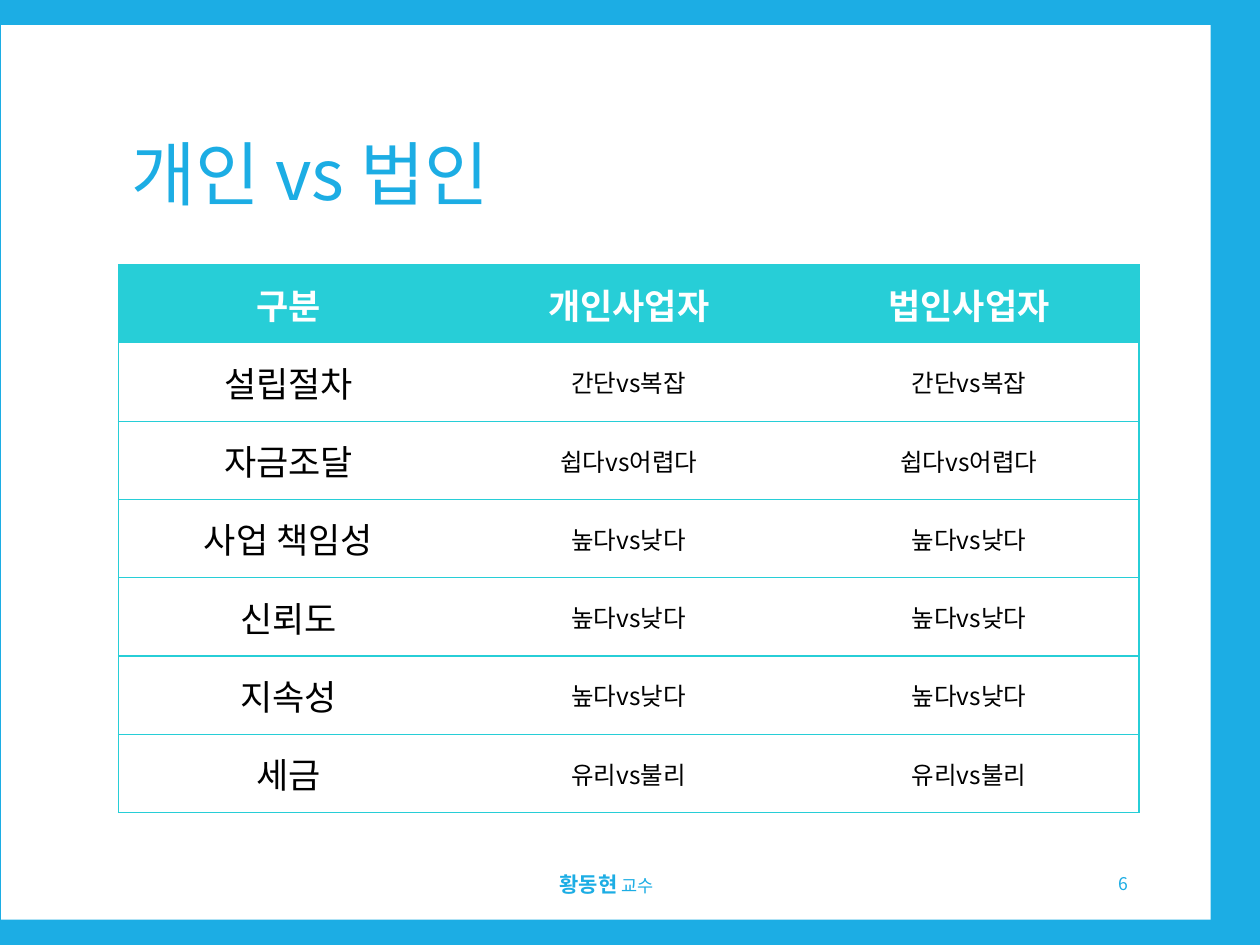
"""Build a slide comparing sole proprietors and corporations in a table."""
import dataclasses

import lxml.etree
import pptx
import pptx.dml.color
import pptx.enum.shapes
import pptx.enum.text
import pptx.oxml.ns
import pptx.util

Pt = pptx.util.Pt
ALIGN = pptx.enum.text.PP_ALIGN
MIDDLE = pptx.enum.text.MSO_ANCHOR.MIDDLE
FONT = "Noto Sans CJK KR"
COLORS = {"blue": "1CADE4", "teal": "27CED7", "white": "FFFFFF", "black": "000000"}
BORDER_WIDTH = Pt(0.79)


@dataclasses.dataclass(frozen=True)
class Box:
    """Position and size in points."""

    left: float
    top: float
    width: float
    height: float

    def lengths(self) -> tuple:
        """Return the four values as lengths."""
        return Pt(self.left), Pt(self.top), Pt(self.width), Pt(self.height)


@dataclasses.dataclass(frozen=True)
class Style:
    """Look of a paragraph."""

    size: float
    color: str
    bold: bool = False
    align: ALIGN = ALIGN.CENTER


@dataclasses.dataclass(frozen=True)
class Comparison:
    """Table row whose verdict shows in both business columns."""

    topic: str
    verdict: str


HEADERS = ("구분", "개인사업자", "법인사업자")
COMPARISONS = (
    Comparison("설립절차", "간단vs복잡"),
    Comparison("자금조달", "쉽다vs어렵다"),
    Comparison("사업 책임성", "높다vs낮다"),
    Comparison("신뢰도", "높다vs낮다"),
    Comparison("지속성", "높다vs낮다"),
    Comparison("세금", "유리vs불리"),
)
HEADER_STYLE = Style(20, "white", bold=True)
TOPIC_STYLE = Style(20, "black")
VERDICT_STYLE = Style(14, "black")

PANEL = Box(0.72, 14.4, 691.2, 511.2)
TITLE = Box(67.68, 48.24, 583.2, 106.56)
TABLE = Box(67.68, 151.2, 583.2, 313.2)
AUTHOR = Box(277.92, 491.04, 137.52, 28.8)
PAGE_NUMBER = Box(550.8, 490.32, 100.8, 28.8)


def rgb(name: str) -> pptx.dml.color.RGBColor:
    """Look up a named colour."""
    return pptx.dml.color.RGBColor.from_string(COLORS[name])


def format_paragraph(paragraph, style: Style) -> None:
    """Apply a style, with the typeface set for Latin and East Asian text."""
    paragraph.alignment = style.align
    font = paragraph.font
    font.name, font.size, font.bold = FONT, Pt(style.size), style.bold
    font.color.rgb = rgb(style.color)
    properties = paragraph._p.get_or_add_pPr().get_or_add_defRPr()
    east_asian = lxml.etree.SubElement(properties, pptx.oxml.ns.qn("a:ea"))
    east_asian.set("typeface", FONT)


def write_text(text_frame, text: str, style: Style):
    """Put one vertically centred paragraph in a text frame."""
    text_frame.word_wrap = True
    text_frame.vertical_anchor = MIDDLE
    paragraph = text_frame.paragraphs[0]
    paragraph.text = text
    format_paragraph(paragraph, style)
    return paragraph


def add_border(cell, side: str, visible: bool) -> None:
    """Draw or hide one side of a cell."""
    qualify = pptx.oxml.ns.qn
    properties = cell._tc.get_or_add_tcPr()
    line = lxml.etree.SubElement(properties, qualify(f"a:ln{side}"), w=str(BORDER_WIDTH))
    if visible:
        fill = lxml.etree.SubElement(line, qualify("a:solidFill"))
        lxml.etree.SubElement(fill, qualify("a:srgbClr"), val=COLORS["teal"])
    else:
        lxml.etree.SubElement(line, qualify("a:noFill"))


def fill_cell(cell, text: str, style: Style, fill: str, outer: dict[str, bool]) -> None:
    """Write, border and fill a table cell."""
    cell.vertical_anchor = MIDDLE
    paragraph = cell.text_frame.paragraphs[0]
    paragraph.text = text
    format_paragraph(paragraph, style)
    for side in ("L", "R", "T", "B"):
        add_border(cell, side, outer.get(side, True))
    cell.fill.solid()
    cell.fill.fore_color.rgb = rgb(fill)


def add_comparison_table(slide) -> None:
    """Add the table with a filled header and horizontal rules."""
    rows = [HEADERS] + [(item.topic, item.verdict, item.verdict) for item in COMPARISONS]
    last_column = len(HEADERS) - 1
    table = slide.shapes.add_table(len(rows), len(HEADERS), *TABLE.lengths()).table
    table.first_row = table.horz_banding = False
    for row in table.rows:
        row.height = Pt(TABLE.height / len(rows))
    for row_index, texts in enumerate(rows):
        for column_index, text in enumerate(texts):
            if row_index == 0:
                style, fill = HEADER_STYLE, "teal"
            else:
                style, fill = (VERDICT_STYLE if column_index else TOPIC_STYLE), "white"
            outer = {"L": column_index == 0, "R": column_index == last_column}
            fill_cell(table.cell(row_index, column_index), text, style, fill, outer)


def add_panel(slide) -> None:
    """Add the white panel behind the content."""
    rectangle = pptx.enum.shapes.MSO_SHAPE.RECTANGLE
    panel = slide.shapes.add_shape(rectangle, *PANEL.lengths())
    panel.shadow.inherit = False
    panel.fill.solid()
    panel.fill.fore_color.rgb = rgb("white")
    panel.line.fill.background()
    slide.shapes._spTree.insert(2, panel._element)


def main() -> None:
    """Build and save the presentation."""
    presentation = pptx.Presentation()
    presentation.slide_width, presentation.slide_height = Pt(720), Pt(540)
    slide = presentation.slides.add_slide(presentation.slide_layouts[5])
    slide.background.fill.solid()
    slide.background.fill.fore_color.rgb = rgb("blue")
    add_panel(slide)

    title = slide.shapes.title
    title.left, title.top, title.width, title.height = TITLE.lengths()
    heading = write_text(title.text_frame, "개인 vs 법인", Style(40, "blue", align=ALIGN.LEFT))
    heading.line_spacing = 0.9

    add_comparison_table(slide)

    author = slide.shapes.add_textbox(*AUTHOR.lengths())
    credit = write_text(author.text_frame, "황동현", Style(12, "blue", bold=True))
    role = credit.add_run()
    role.text = " 교수"
    role.font.size, role.font.bold = Pt(10), False

    number = slide.shapes.add_textbox(*PAGE_NUMBER.lengths())
    write_text(number.text_frame, "6", Style(10, "blue", align=ALIGN.RIGHT))
    presentation.save("out.pptx")


if __name__ == "__main__":
    main()
